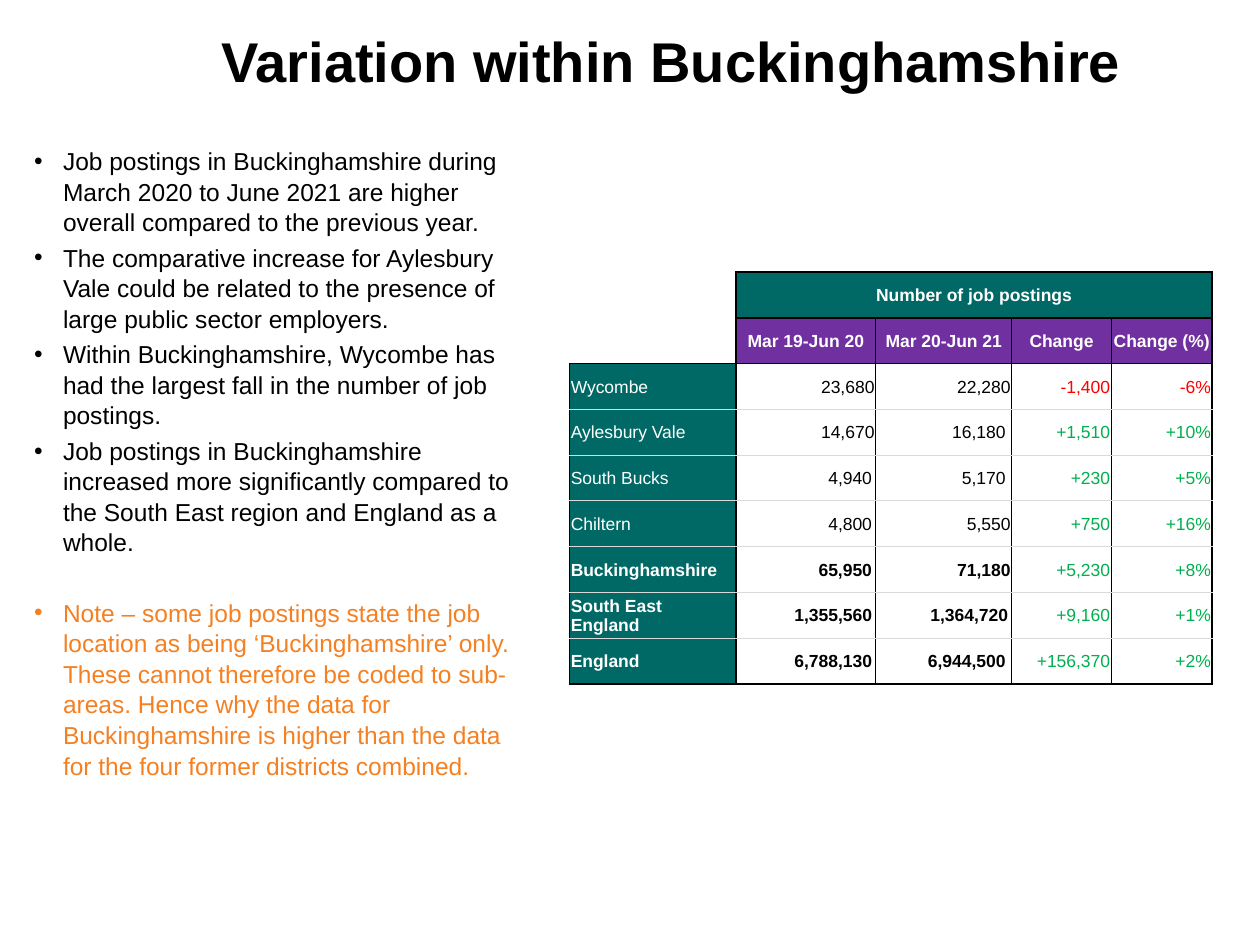
from lxml.etree import SubElement
from pptx import Presentation
from pptx.dml.color import RGBColor
from pptx.enum.text import MSO_ANCHOR, MSO_AUTO_SIZE, PP_ALIGN
from pptx.oxml.ns import qn
from pptx.util import Inches, Pt

BLACK, WHITE, GREY = "000000", "FFFFFF", "D9D9D9"
TEAL, PURPLE, ORANGE = "006965", "7030A0", "F58021"
RED, GREEN = "FF0000", "00B050"
NO_STYLE = "{2D5ABB26-0587-4C30-8999-92F81FD0307C}"

POINTS = [
    "Job postings in Buckinghamshire during March 2020 to June 2021 are higher "
    "overall compared to the previous year.",
    "The comparative increase for Aylesbury Vale could be related to the "
    "presence of large public sector employers.",
    "Within Buckinghamshire, Wycombe has had the largest fall in the number of "
    "job postings.",
    "Job postings in Buckinghamshire increased more significantly compared to "
    "the South East region and England as a whole.",
]
NOTE = (
    "Note – some job postings state the job location as being ‘Buckinghamshire’ "
    "only. These cannot therefore be coded to sub-areas. Hence why the data for "
    "Buckinghamshire is higher than the data for the four former districts combined."
)

WIDTHS = [1.32, 1.11, 1.08, 0.79, 0.8]
HEADS = ["Mar 19-Jun 20", "Mar 20-Jun 21", "Change", "Change (%)"]
# Area, two periods, change, change in percent, right insets of the periods
AREAS = [
    ("Wycombe", "23,680", "22,280", "-1,400", "-6%", 0.01, 0.01),
    ("Aylesbury Vale", "14,670", "16,180", "+1,510", "+10%", 0.01, 0.05),
    ("South Bucks", "4,940", "5,170", "+230", "+5%", 0.03, 0.05),
    ("Chiltern", "4,800", "5,550", "+750", "+16%", 0.03, 0.01),
    ("Buckinghamshire", "65,950", "71,180", "+5,230", "+8%", 0.03, 0.01),
    ("South East England", "1,355,560", "1,364,720", "+9,160", "+1%", 0.03, 0.03),
    ("England", "6,788,130", "6,944,500", "+156,370", "+2%", 0.03, 0.05),
]
ROWS = len(AREAS) + 2
TOTALS = 6  # first row with bold figures


def paint(text):
    return RGBColor.from_string(text)


def place(shape, left, top, width, height):
    shape.left, shape.top = Inches(left), Inches(top)
    shape.width, shape.height = Inches(width), Inches(height)


def add_run(para, text, size, color, bold=False):
    run = para.add_run()
    run.text = text
    font = run.font
    font.name, font.size, font.bold = "Arial", Pt(size), bold
    font.color.rgb = paint(color)


def add_point(para, text, color, gap):
    props = para._p.get_or_add_pPr()
    props.set("marL", str(Inches(0.23)))
    props.set("indent", str(-Inches(0.23)))
    SubElement(props, qn("a:buChar"), char="•")
    para.space_before, para.line_spacing = Pt(gap), 1.04
    add_run(para, text, 14, color)


def add_list(body):
    place(body, 0.17, 1.1, 4.12, 5.38)
    frame = body.text_frame
    frame.auto_size = MSO_AUTO_SIZE.SHAPE_TO_FIT_TEXT
    for idx, text in enumerate(POINTS):
        para = frame.add_paragraph() if idx else frame.paragraphs[0]
        add_point(para, text, BLACK, 2.8 if idx else 0)
    add_point(frame.add_paragraph(), NOTE, ORANGE, 22.7)


def add_edge(cell, side, color, width):
    line = SubElement(cell._tc.get_or_add_tcPr(), qn("a:ln" + side), w=str(Pt(width)))
    fill = SubElement(line, qn("a:solidFill"))
    SubElement(fill, qn("a:srgbClr"), val=color)


def side_rule(row, edge):
    """Rule at a column edge: heavy around the grid and the area names."""
    if edge == 0 and row < 2:
        return None
    return BLACK, 1 if edge in (0, 1, 5) or row == 0 else 0.5


def level_rule(col, edge):
    """Rule at a row edge: dark around the heads and at the foot."""
    if col == 0 and edge < 2:
        return None
    if edge in (0, 1, ROWS) or (col == 0 and edge == 2):
        return BLACK, 1
    return (BLACK if edge == 2 else GREY), 0.5


def add_rules(cell, row, col):
    rules = {
        "L": side_rule(row, col),
        "R": side_rule(row, col + 1),
        "T": level_rule(col, row),
        "B": level_rule(col, row + 1),
    }
    for side, rule in rules.items():
        if rule:
            add_edge(cell, side, *rule)


def fill_cell(cell, text, fill, color, bold, align, inset=0.01):
    if fill:
        cell.fill.solid()
        cell.fill.fore_color.rgb = paint(fill)
    else:
        cell.fill.background()
    cell.margin_left = cell.margin_top = Inches(0.01)
    cell.margin_right, cell.margin_bottom = Inches(inset), 0
    cell.vertical_anchor = MSO_ANCHOR.MIDDLE
    para = cell.text_frame.paragraphs[0]
    para.alignment = align
    if text:
        add_run(para, text, 10, color, bold)


def add_grid(slide):
    frame = slide.shapes.add_table(
        ROWS, len(WIDTHS), Inches(4.52), Inches(2.16), Inches(5.1), Inches(3.27))
    grid = frame.table
    grid.first_row = grid.horz_banding = False
    grid._tbl.tblPr.find(qn("a:tableStyleId")).text = NO_STYLE
    for col, width in enumerate(WIDTHS):
        grid.columns[col].width = Inches(width)
    for row in range(ROWS):
        grid.rows[row].height = Inches(3.27 / ROWS)
        for col in range(len(WIDTHS)):
            add_rules(grid.cell(row, col), row, col)

    # Heads
    grid.cell(0, 1).merge(grid.cell(0, 4))
    for row in range(2):
        fill_cell(grid.cell(row, 0), "", None, BLACK, False, PP_ALIGN.LEFT)
    fill_cell(grid.cell(0, 1), "Number of job postings", TEAL, WHITE, True, PP_ALIGN.CENTER)
    for col, text in enumerate(HEADS, 1):
        fill_cell(grid.cell(1, col), text, PURPLE, WHITE, True, PP_ALIGN.CENTER)

    # Areas and figures
    for row, (area, *vals, first, last) in enumerate(AREAS, 2):
        bold = row >= TOTALS
        fill_cell(grid.cell(row, 0), area, TEAL, WHITE, bold, PP_ALIGN.LEFT)
        insets = [first, last, 0.01, 0.01]
        for col, (text, inset) in enumerate(zip(vals, insets), 1):
            trend = RED if text.startswith("-") else GREEN
            color = BLACK if col < 3 else trend
            fill_cell(grid.cell(row, col), text, None, color,
                      bold and col < 3, PP_ALIGN.RIGHT, inset)


def main():
    deck = Presentation()
    deck.slide_width, deck.slide_height = Inches(10), Inches(7.5)
    slide = deck.slides.add_slide(deck.slide_layouts[1])

    # Title
    title = slide.shapes.title
    place(title, 0.83, -0.15, 9, 1.25)
    title.text_frame.vertical_anchor = MSO_ANCHOR.MIDDLE
    para = title.text_frame.paragraphs[0]
    para.alignment = PP_ALIGN.CENTER
    add_run(para, "Variation within Buckinghamshire", 32, BLACK, True)

    # Findings and figures
    add_list(slide.placeholders[1])
    add_grid(slide)
    deck.save("out.pptx")


if __name__ == "__main__":
    main()
